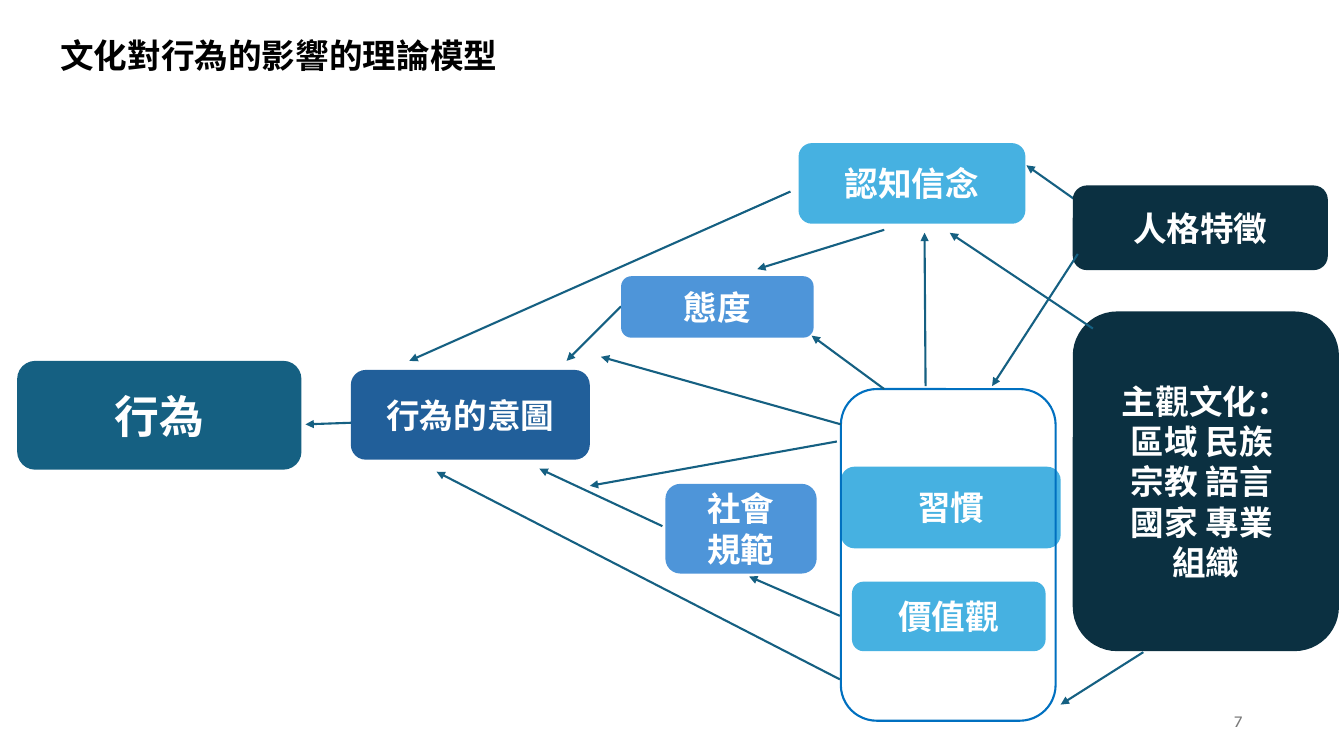
from dataclasses import dataclass

from lxml import etree
from pptx import Presentation
from pptx.dml.color import RGBColor
from pptx.enum.shapes import MSO_CONNECTOR, MSO_SHAPE
from pptx.enum.text import MSO_ANCHOR, MSO_AUTO_SIZE, PP_ALIGN
from pptx.oxml.ns import qn
from pptx.shapes.autoshape import Shape
from pptx.slide import Slide
from pptx.text.text import TextFrame
from pptx.util import Emu, Pt

ROUND = MSO_SHAPE.FLOWCHART_ALTERNATE_PROCESS
STRAIGHT = MSO_CONNECTOR.STRAIGHT
MIDDLE = MSO_ANCHOR.MIDDLE
FIT = MSO_AUTO_SIZE.SHAPE_TO_FIT_TEXT
LEFT, CENTER, RIGHT = PP_ALIGN.LEFT, PP_ALIGN.CENTER, PP_ALIGN.RIGHT

SCALE = 9144  # EMU per px, 100 px to the inch
FONT = "Karla"
TEAL, NAVY, SKY, BLUE = "156082", "0B3041", "46B1E1", "4E95D9"
WHITE, BLACK, GREY = "FFFFFF", "000000", "797979"


@dataclass(frozen=True)
class Box:
    left: int
    top: int
    width: int
    height: int
    fill: str
    lines: tuple[str, ...]
    size: int = 24


@dataclass(frozen=True)
class Arrow:
    x1: int
    y1: int
    x2: int
    y2: int


BACK = (
    Arrow(1069, 200, 1018, 164),
    Arrow(389, 418, 303, 421),
    Arrow(784, 190, 406, 358),
    Arrow(616, 304, 562, 358),
    Arrow(918, 383, 917, 231),
    Arrow(657, 522, 535, 465),
    Arrow(877, 228, 751, 267),
)
BOXES = (
    Box(348, 367, 237, 89, "215F9A", ("行為的意圖",)),
    Box(17, 358, 282, 108, TEAL, ("行為",), 32),
    Box(792, 142, 225, 80, SKY, ("認知信念",)),
    Box(660, 480, 150, 89, BLUE, ("社會", "規範")),
    Box(616, 274, 191, 61, BLUE, ("態度",)),
    Box(1064, 184, 253, 84, NAVY, ("人格特徵",)),
    Box(1064, 309, 264, 337, NAVY,
        ("主觀文化：", "區域 民族 ", "宗教 語言 ", "國家 專業 ", "組織")),
    Box(845, 577, 192, 69, SKY, ("價值觀",)),
    Box(834, 463, 218, 81, SKY, ("習慣",)),
)
FRONT = (
    Arrow(1084, 326, 942, 231),
    Arrow(1069, 252, 984, 383),
    Arrow(833, 611, 743, 572),
    Arrow(877, 386, 805, 333),
    Arrow(1134, 647, 1052, 699),
    Arrow(833, 674, 433, 468),
    Arrow(834, 421, 596, 354),
    Arrow(830, 438, 585, 482),
)


def px(*values: int) -> list[Emu]:
    return [Emu(value * SCALE) for value in values]


def color(code: str) -> RGBColor:
    return RGBColor.from_string(code)


def write(frame: TextFrame, lines: tuple[str, ...], size: int, ink: str,
          align: PP_ALIGN, bold: bool = True) -> None:
    for i, line in enumerate(lines):
        para = frame.add_paragraph() if i else frame.paragraphs[0]
        para.alignment = align
        run = para.add_run()
        run.text = line
        font = run.font
        font.name, font.size, font.bold = FONT, Pt(size), bold
        font.color.rgb = color(ink)


def add_round(slide: Slide, left: int, top: int, width: int,
              height: int) -> Shape:
    shape = slide.shapes.add_shape(ROUND, *px(left, top, width, height))
    shape.shadow.inherit = False
    return shape


def add_box(slide: Slide, box: Box) -> None:
    shape = add_round(slide, box.left, box.top, box.width, box.height)
    shape.fill.solid()
    shape.fill.fore_color.rgb = color(box.fill)
    shape.line.fill.background()
    shape.text_frame.vertical_anchor = MIDDLE
    write(shape.text_frame, box.lines, box.size, WHITE, CENTER)


def add_frame(slide: Slide) -> None:
    """Outline the group of habits and values."""
    shape = add_round(slide, 834, 386, 213, 329)
    shape.fill.background()
    shape.line.color.rgb = color("0070C0")
    shape.line.width = Pt(1.5)


def add_arrow(slide: Slide, arrow: Arrow) -> None:
    ends = px(arrow.x1, arrow.y1, arrow.x2, arrow.y2)
    link = slide.shapes.add_connector(STRAIGHT, *ends)
    link.line.color.rgb = color(TEAL)
    link.line.width = Pt(1.5)
    props = link._element.spPr
    etree.SubElement(props.find(qn("a:ln")), qn("a:tailEnd"), type="triangle")
    etree.SubElement(props, qn("a:effectLst"))


def add_title(slide: Slide) -> None:
    frame = slide.shapes.add_textbox(*px(50, 30, 458, 50)).text_frame
    frame.word_wrap = False
    frame.auto_size = FIT
    write(frame, ("文化對行為的影響的理論模型",), 24, BLACK, LEFT)


def add_number(slide: Slide) -> None:
    frame = slide.shapes.add_textbox(*px(942, 695, 300, 40)).text_frame
    frame.word_wrap = True
    frame.vertical_anchor = MIDDLE
    write(frame, ("7",), 12, GREY, RIGHT, bold=False)


def main() -> None:
    deck = Presentation()
    deck.slide_width, deck.slide_height = px(1333, 750)
    slide = deck.slides.add_slide(deck.slide_layouts[6])
    add_title(slide)
    for arrow in BACK:
        add_arrow(slide, arrow)
    for box in BOXES:
        add_box(slide, box)
    add_frame(slide)
    for arrow in FRONT:
        add_arrow(slide, arrow)
    add_number(slide)
    deck.save("out.pptx")


if __name__ == "__main__":
    main()
